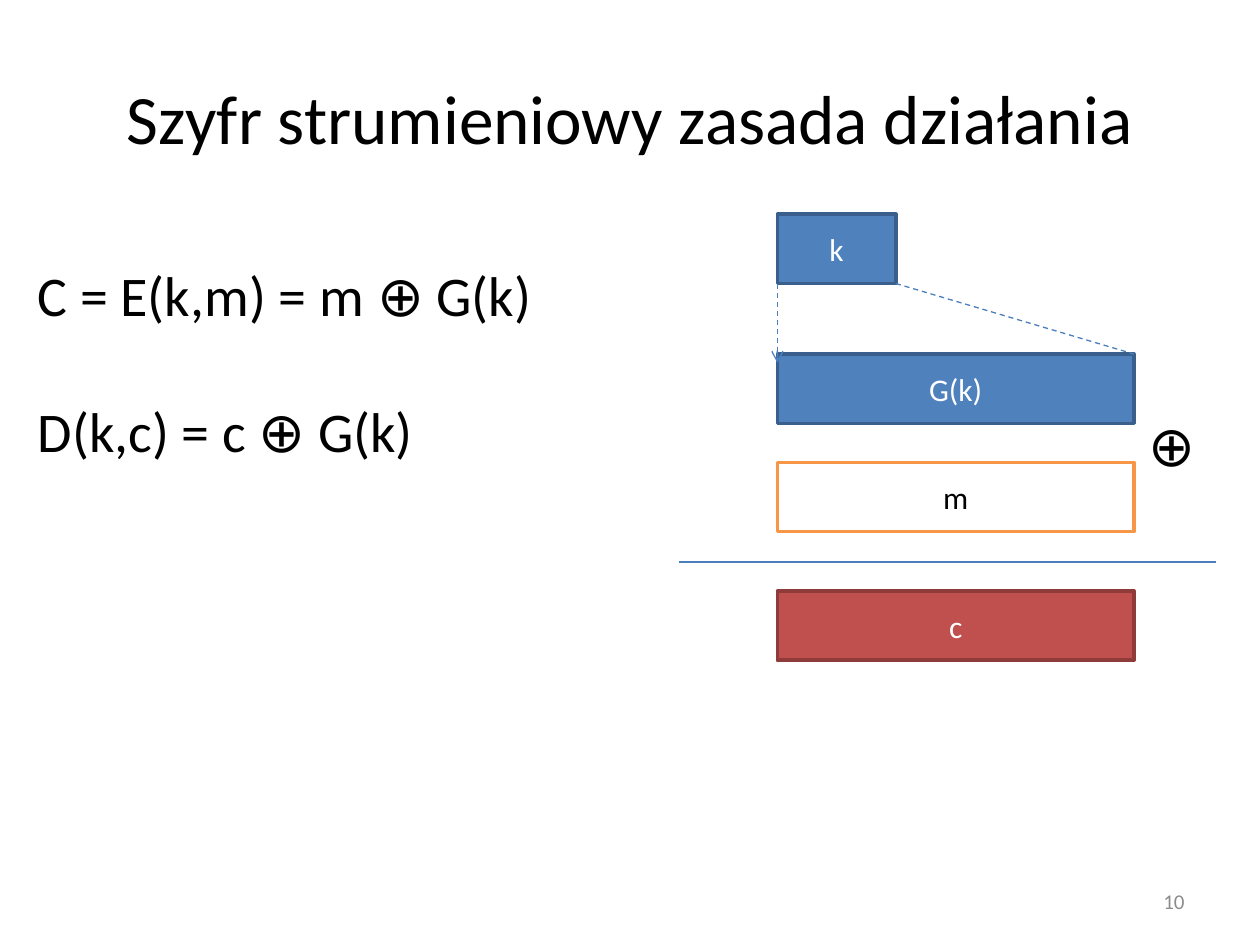
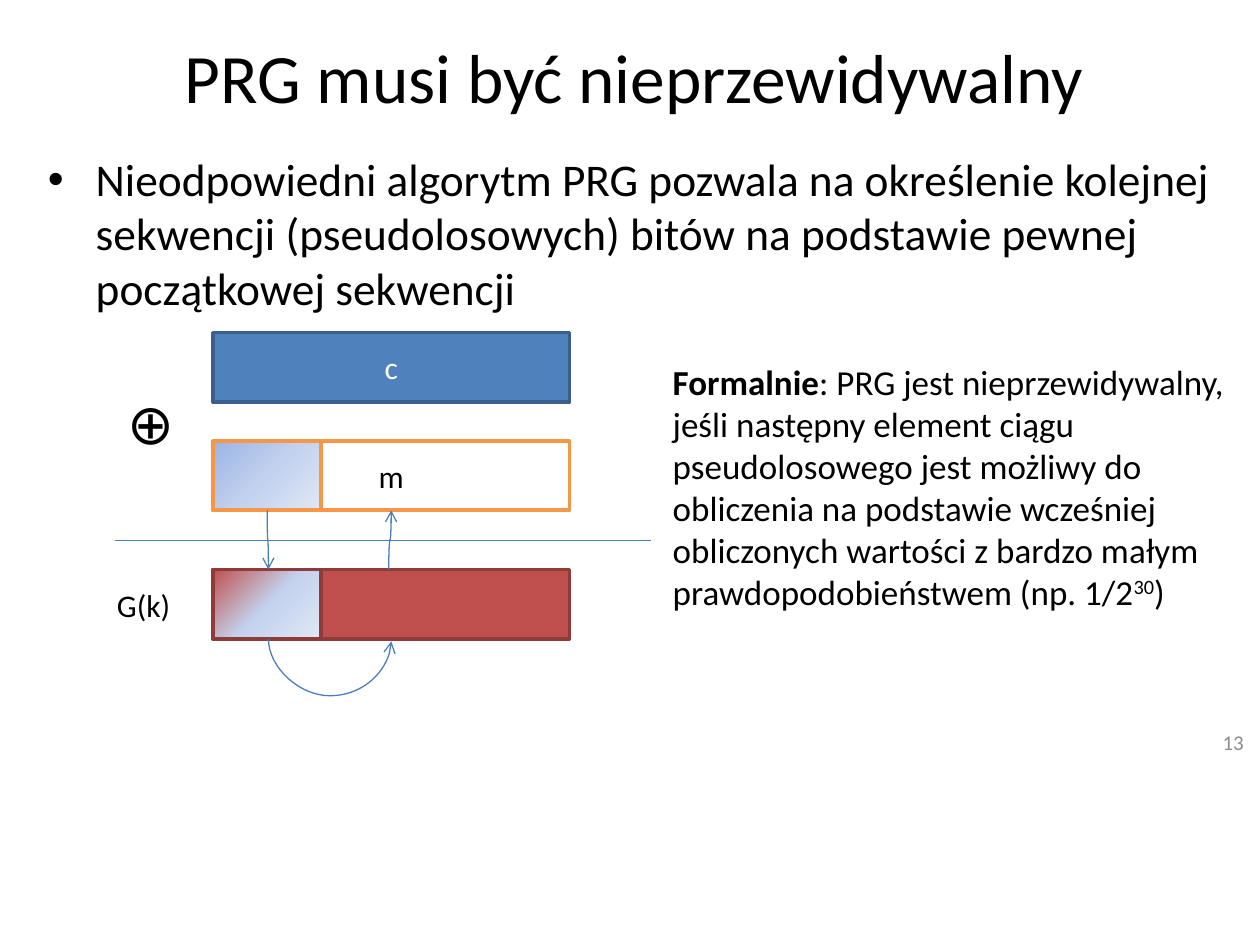
from copy import deepcopy

from lxml import etree
from pptx import Presentation
from pptx import util as u
from pptx.dml.color import RGBColor
from pptx.enum import dml, shapes, text
from pptx.oxml.ns import qn

FONT = "Calibri"
INK = {
    "black": "000000", "white": "FFFFFF", "grey": "8C8C8C", "wire": "4B7EBC",
    "blue": "4F81BD", "navy": "3A5F8C", "orange": "F79646",
    "red": "C0504D", "wine": "8E3B39",
    "sky": "9AB5E4", "pale": "C2D1ED", "mist": "E1E8F5",
}
# fill, line and text colour of each kind of bar
KEY = ("blue", "navy", "white")
PLAIN = ("white", "orange", "black")
CODE = ("red", "wine", "white")

# The slide is a grid of 100 columns and 75 rows
WIDE, HIGH = u.Inches(10), u.Inches(7.5)
BAR_W, BAR_H, PART_W = 28.3, 5.5, 8.6
BAR_X, RULE_W = 7.8, 42.6
STEPS, RULE_Y, SIGN_Y = (0, 8.6, 18.8), 16.5, 3.95


def cols(n):
    return round(WIDE * n / 100)


def rows(n):
    return round(HIGH * n / 75)


def box(x, y, w, h):
    return cols(x), rows(y), cols(w), rows(h)


def ink(name):
    return RGBColor.from_string(INK[name])


def style(frame, size, color="black", align=None):
    for para in frame.paragraphs:
        if align is not None:
            para.alignment = align
        for run in para.runs:
            run.font.name = FONT
            run.font.size = u.Pt(size)
            run.font.color.rgb = ink(color)


def add_text(slide, area, words, size, color="black", align=None, wrap=True):
    frame = slide.shapes.add_textbox(*box(*area)).text_frame
    frame.word_wrap = wrap
    frame.text = words
    style(frame, size, color, align)
    return frame


def fill_holder(holder, area, words, size):
    holder.left, holder.top, holder.width, holder.height = box(*area)
    frame = holder.text_frame
    frame.text = words
    frame.auto_size = text.MSO_AUTO_SIZE.NONE
    style(frame, size)
    return frame


def add_title(slide, area, words):
    frame = fill_holder(slide.shapes.title, area, words, 39.6)
    frame.vertical_anchor = text.MSO_ANCHOR.MIDDLE
    frame.paragraphs[0].alignment = text.PP_ALIGN.CENTER


def add_page(slide, x, y, number):
    frame = add_text(slide, (x, y, 23.3, 4), number, 12, "grey", text.PP_ALIGN.RIGHT)
    frame.vertical_anchor = text.MSO_ANCHOR.MIDDLE


def add_bar(slide, x, y, look, label="", width=BAR_W):
    fill, line, color = look
    bar = slide.shapes.add_shape(
        shapes.MSO_SHAPE.RECTANGLE, *box(x, y, width, BAR_H))
    bar.shadow.inherit = False
    bar.fill.solid()
    bar.fill.fore_color.rgb = ink(fill)
    bar.line.color.rgb = ink(line)
    bar.line.width = u.Pt(2)
    if label:
        bar.text_frame.text = label
        bar.text_frame.vertical_anchor = text.MSO_ANCHOR.MIDDLE
        style(bar.text_frame, 18, color, text.PP_ALIGN.CENTER)
    return bar


def add_part(slide, x, y, look, first):
    """Mark the known start of a bar with a diagonal blend."""
    part = add_bar(slide, x, y, look, width=PART_W)
    part.fill.gradient()
    part.fill.gradient_angle = 315
    stops = part.element.spPr.find(".//" + qn("a:gsLst"))
    stops.insert(1, deepcopy(stops[0]))
    for stop, place, name in zip(
            part.fill.gradient_stops, (0, 0.5, 1), (first, "pale", "mist")):
        stop.position = place
        stop.color.rgb = ink(name)


def add_wire(slide, start, end, dash=False, arrow=False,
             kind=shapes.MSO_CONNECTOR.STRAIGHT):
    wire = slide.shapes.add_connector(
        kind, cols(start[0]), rows(start[1]), cols(end[0]), rows(end[1]))
    wire.line.color.rgb = ink("wire")
    wire.line.width = u.Pt(0.75)
    if dash:
        wire.line.dash_style = dml.MSO_LINE.DASH
    if arrow:
        etree.SubElement(wire.line._get_or_add_ln(), qn("a:tailEnd"), type="arrow")
    etree.SubElement(wire.element.spPr, qn("a:effectLst"))
    return wire


def add_curve(slide, start, end, bend=0.5):
    """Draw a curved arrow that leaves and arrives upright.

    The connector is laid on its side about its centre, then turned.
    bend is the turning point as a share of the height between the ends.
    """
    (x1, y1), (x2, y2) = start, end
    mid_x, mid_y = (x1 + x2) / 2, (y1 + y2) / 2
    half_w, half_h = (x2 - x1) / 2, (y2 - y1) / 2
    curve = add_wire(
        slide, (mid_x + half_h, mid_y - half_w), (mid_x - half_h, mid_y + half_w),
        arrow=True, kind=shapes.MSO_CONNECTOR.CURVE)
    props = curve.element.spPr
    props.find(qn("a:xfrm")).set("rot", str(270 * 60000))
    geom = props.find(qn("a:prstGeom"))
    guides = geom.find(qn("a:avLst"))
    if guides is None:
        guides = etree.SubElement(geom, qn("a:avLst"))
    etree.SubElement(guides, qn("a:gd"), name="adj1",
                     fmla=f"val {round(bend * 100000)}")


def add_sum(slide, x, y, labels, sign_x):
    """Stack two bars, the ⊕ sign, a rule and the resulting bar."""
    for step, look, label in zip(STEPS, (KEY, PLAIN, CODE), labels):
        add_bar(slide, x + BAR_X, y + step, look, label)
    add_wire(slide, (x, y + RULE_Y), (x + RULE_W, y + RULE_Y))
    add_text(slide, (x + sign_x, y + SIGN_Y, 5.5, 6.4), "⊕", 32)


def add_stream(slide, x, y):
    """Show key k stretched to G(k) and combined with m."""
    key_w, drop = 9.4, 11.1
    left, base = x + BAR_X, y + BAR_H
    add_bar(slide, left, y, KEY, "k", key_w)
    add_sum(slide, x, y + drop, ("G(k)", "m", "c"), 36.3)
    add_wire(slide, (left + key_w, base), (left + BAR_W, y + drop), dash=True)
    add_wire(slide, (left, base), (left, y + drop + 0.7), dash=True, arrow=True)


def add_attack(slide, x, y):
    """Show how the known start of m reveals the rest of G(k)."""
    left, plain, code = x + BAR_X, y + STEPS[1], y + STEPS[2]
    add_sum(slide, x, y, ("c", "m", ""), 0)
    add_part(slide, left, plain, PLAIN, "sky")
    add_part(slide, left, code, CODE, "red")
    add_text(slide, (x - 0.8, code + 0.8, 6.3, 4), "G(k)", 18, wrap=False)
    known, next_bit = left + PART_W / 2, left + BAR_W / 2
    add_curve(slide, (known, plain + BAR_H), (known + 0.1, code))
    add_curve(slide, (known + 0.1, code + BAR_H), (next_bit, code + BAR_H + 0.2), 22.5)
    add_curve(slide, (next_bit - 0.2, code), (next_bit, plain + BAR_H))


def add_formal(slide, area):
    frame = add_text(slide, area, "Formalnie", 20)
    para = frame.paragraphs[0]
    for words in (
            ": PRG jest nieprzewidywalny, jeśli następny element ciągu "
            "pseudolosowego jest możliwy do obliczenia na podstawie wcześniej "
            "obliczonych wartości z bardzo małym prawdopodobieństwem (np. 1/2",
            "30", ")"):
        para.add_run().text = words
    style(frame, 20)
    para.runs[0].font.bold = True
    para.runs[2].font._element.set("baseline", "30000")


def build_cipher(deck):
    slide = deck.slides.add_slide(deck.slide_layouts[5])
    add_title(slide, (5, 3, 90, 12.5), "Szyfr strumieniowy zasada działania")
    add_page(slide, 71.7, 69.5, "10")
    add_stream(slide, 53.9, 17)
    rules = add_text(slide, (2, 20.2, 52.8, 17.2),
                     "C = E(k,m) = m ⊕ G(k)\nD(k,c) = c ⊕ G(k)", 32)
    rules.paragraphs[1].space_before = u.Pt(39)


def build_guess(deck):
    slide = deck.slides.add_slide(deck.slide_layouts[1])
    add_title(slide, (5, 3, 90.7, 6.1), "PRG musi być nieprzewidywalny")
    body = fill_holder(
        slide.placeholders[1], (2.8, 11.5, 94.5, 13.4),
        "Nieodpowiedni algorytm PRG pozwala na określenie kolejnej sekwencji "
        "(pseudolosowych) bitów na podstawie pewnej początkowej sekwencji", 25.9)
    props = body.paragraphs[0]._p.get_or_add_pPr()
    props.set("marL", str(cols(3.8)))
    props.set("indent", str(-cols(3.8)))
    add_page(slide, 76.4, 56.9, "13")
    add_attack(slide, 9.1, 26.4)
    add_formal(slide, (52.4, 28.1, 46.1, 21.2))


def main():
    deck = Presentation()
    deck.slide_width, deck.slide_height = WIDE, HIGH
    build_cipher(deck)
    build_guess(deck)
    deck.save("out.pptx")


if __name__ == "__main__":
    main()
